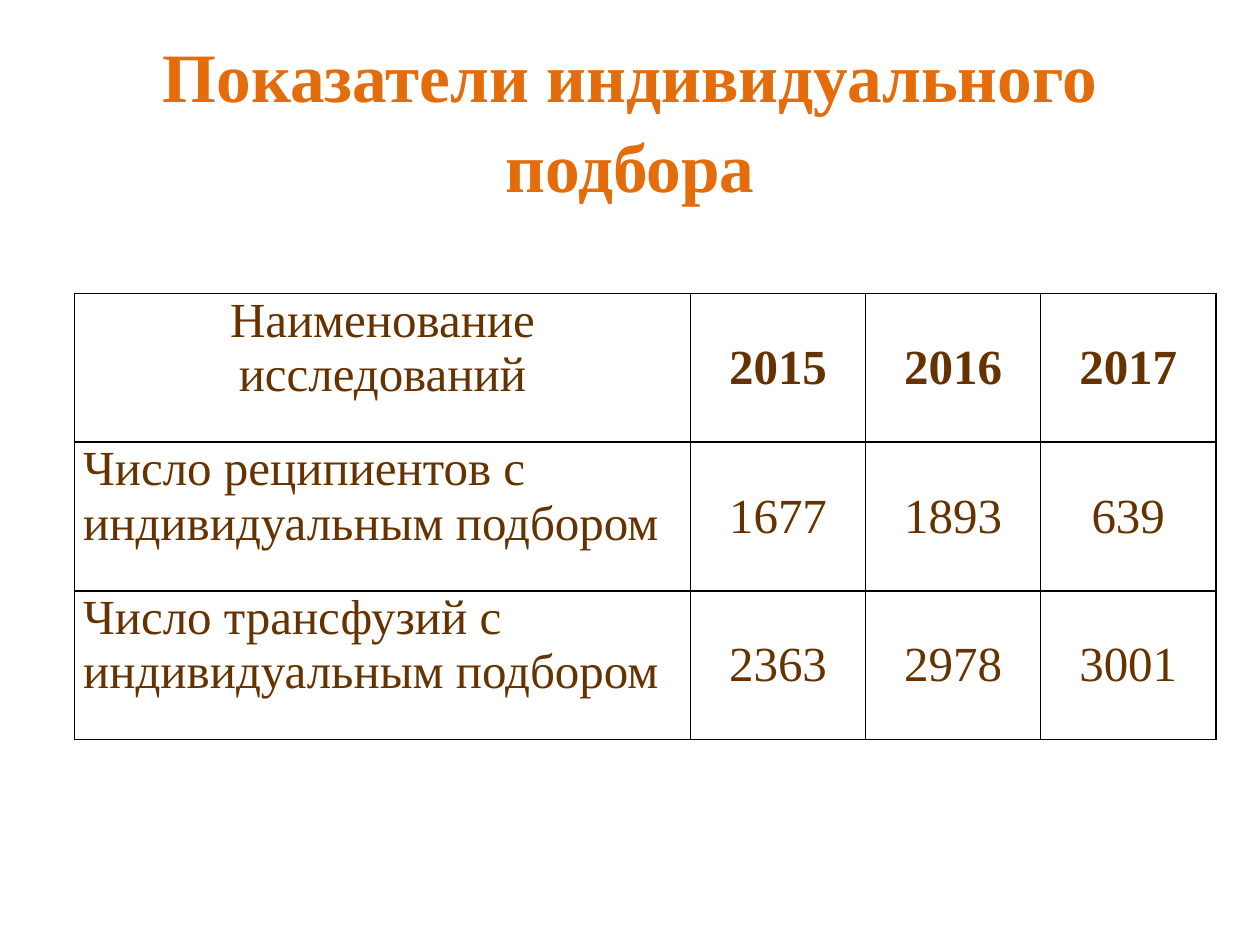
from dataclasses import dataclass

from lxml.etree import SubElement
from pptx import Presentation
from pptx.dml.color import RGBColor
from pptx.enum.text import MSO_ANCHOR as Anchor, MSO_AUTO_SIZE as AutoSize, PP_ALIGN as Align
from pptx.oxml.ns import qn
from pptx.slide import Slide
from pptx.table import _Cell as Cell
from pptx.text.text import _Paragraph as Para
from pptx.util import Inches, Pt


@dataclass(frozen=True)
class Theme:
    font: str = "Times New Roman"
    title_color: str = "E46C0A"
    text_color: str = "663300"
    fill: str = "FFFFFF"
    border: str = "000000"
    title_size: float = 39.6
    table_size: float = 28
    border_width: float = 1


@dataclass(frozen=True)
class Row:
    label: str
    values: tuple[str, ...]


THEME = Theme()
TITLE = "Показатели индивидуального подбора"
ROWS = (
    Row("Наименование исследований", ("2015", "2016", "2017")),
    Row("Число реципиентов с индивидуальным подбором", ("1677", "1893", "639")),
    Row("Число трансфузий с индивидуальным подбором", ("2363", "2978", "3001")),
)
LABEL_WIDTH, VALUE_WIDTH, ROW_HEIGHT = 4.89, 1.39, 1.18
WIDE_MARGIN, NARROW_MARGIN = 0.07, 0.01


def format_para(para: Para, size: float, color: str, bold: bool, align: Align) -> None:
    para.alignment = align
    for span in para.runs:
        span.font.name = THEME.font
        span.font.size = Pt(size)
        span.font.bold = bold
        span.font.color.rgb = RGBColor.from_string(color)


def add_borders(cell: Cell) -> None:
    properties = cell._tc.get_or_add_tcPr()
    for position, side in enumerate(("lnL", "lnR", "lnT", "lnB")):
        line = SubElement(properties, qn(f"a:{side}"), w=str(Pt(THEME.border_width)))
        fill = SubElement(line, qn("a:solidFill"))
        SubElement(fill, qn("a:srgbClr"), val=THEME.border)
        properties.insert(position, line)


def fill_cell(cell: Cell, text: str, bold: bool, align: Align, anchor: Anchor, margin: float) -> None:
    cell.text_frame.text = text
    format_para(cell.text_frame.paragraphs[0], THEME.table_size, THEME.text_color, bold, align)
    cell.vertical_anchor = anchor
    cell.margin_left = cell.margin_right = Inches(margin)
    cell.margin_top = cell.margin_bottom = 0
    cell.fill.solid()
    cell.fill.fore_color.rgb = RGBColor.from_string(THEME.fill)
    add_borders(cell)


def add_title(page: Slide) -> None:
    title = page.shapes.title
    title.left, title.top = Inches(0.5), Inches(0.3)
    title.width, title.height = Inches(9), Inches(1.25)
    frame = title.text_frame
    frame.text = TITLE
    frame.auto_size = AutoSize.NONE
    frame.word_wrap = True
    frame.vertical_anchor = Anchor.MIDDLE
    para = frame.paragraphs[0]
    para.line_spacing = 1.08
    format_para(para, THEME.title_size, THEME.title_color, True, Align.CENTER)


def add_indicator_table(page: Slide, rows: tuple[Row, ...]) -> None:
    value_count = len(rows[0].values)
    widths = [LABEL_WIDTH] + [VALUE_WIDTH] * value_count
    table = page.shapes.add_table(
        len(rows), len(widths), Inches(0.59), Inches(2.33),
        Inches(sum(widths)), Inches(ROW_HEIGHT * len(rows)),
    ).table
    table.horz_banding = False
    table.first_row = False
    for column, width in zip(table.columns, widths):
        column.width = Inches(width)
    for row_index, row in enumerate(rows):
        table.rows[row_index].height = Inches(ROW_HEIGHT)
        header = row_index == 0
        label_align = Align.CENTER if header else Align.LEFT
        fill_cell(table.cell(row_index, 0), row.label, False, label_align, Anchor.TOP, WIDE_MARGIN)
        for column_index, value in enumerate(row.values, start=1):
            margin = WIDE_MARGIN if column_index == value_count else NARROW_MARGIN
            fill_cell(table.cell(row_index, column_index), value, header,
                      Align.CENTER, Anchor.MIDDLE, margin)


def main() -> None:
    deck = Presentation()
    deck.slide_width, deck.slide_height = Inches(10), Inches(7.5)
    page = deck.slides.add_slide(deck.slide_layouts[5])
    add_title(page)
    add_indicator_table(page, ROWS)
    deck.save("out.pptx")


if __name__ == "__main__":
    main()
